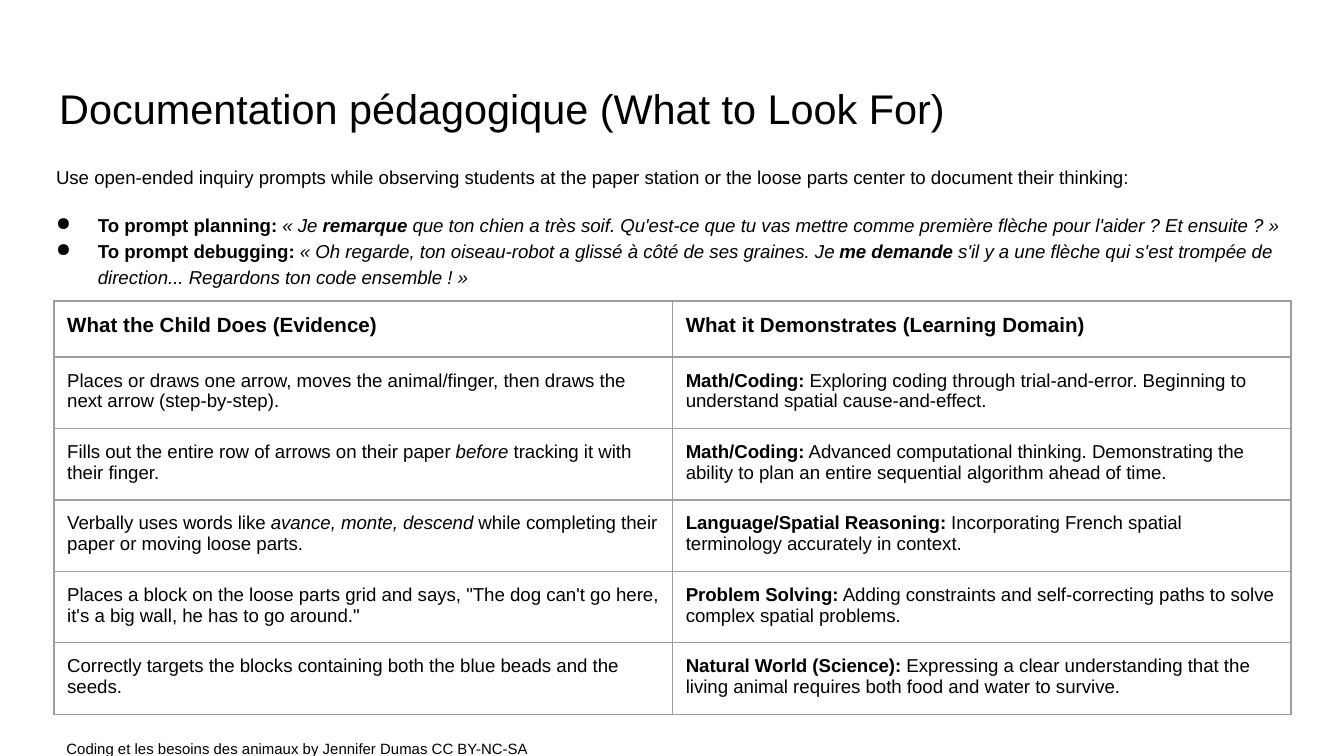
import pptx
import pptx.dml.color
import pptx.enum.text
import pptx.oxml
import pptx.oxml.ns
import pptx.util

PROMPTS = [
    [("To prompt planning: ", "b"), ("« Je ", "i"), ("remarque", "bi"),
     (" que ton chien a très soif. Qu'est-ce que tu vas mettre comme première flèche pour l'aider ? Et ensuite ? »", "i")],
    [("To prompt debugging: ", "b"),
     ("« Oh regarde, ton oiseau-robot a glissé à côté de ses graines. Je ", "i"), ("me demande", "bi"),
     (" s'il y a une flèche qui s'est trompée de direction... Regardons ton code ensemble ! »", "i")],
]
HEADINGS = ["What the Child Does (Evidence)", "What it Demonstrates (Learning Domain)"]
OBSERVATIONS = [
    ([("Places or draws one arrow, moves the animal/finger, then draws the next arrow (step-by-step).", "")],
     "Math/Coding:", " Exploring coding through trial-and-error. Beginning to understand spatial cause-and-effect."),
    ([("Fills out the entire row of arrows on their paper ", ""), ("before", "i"),
      (" tracking it with their finger.", "")],
     "Math/Coding:",
     " Advanced computational thinking. Demonstrating the ability to plan an entire sequential algorithm ahead of time."),
    ([("Verbally uses words like ", ""), ("avance, monte, descend", "i"),
      (" while completing their paper or moving loose parts.", "")],
     "Language/Spatial Reasoning:", " Incorporating French spatial terminology accurately in context."),
    ([("Places a block on the loose parts grid and says, \"The dog can't go here, it's a big wall, he has to go around.\"", "")],
     "Problem Solving:", " Adding constraints and self-correcting paths to solve complex spatial problems."),
    ([("Correctly targets the blocks containing both the blue beads and the seeds.", "")],
     "Natural World (Science):",
     " Expressing a clear understanding that the living animal requires both food and water to survive."),
]


def color(code):
    return pptx.dml.color.RGBColor.from_string(code)


class Sheet:
    """Holds the slide together with its font, ink, border and inset."""

    font, ink, border, inset = "Arial", "000000", "9E9E9E", pptx.util.Cm(0.25)

    def __init__(self, slide):
        self.slide = slide

    def add_words(self, paragraph, pieces, size):
        for words, style in pieces:
            run = paragraph.add_run()
            run.text = words
            run.font.name, run.font.size = self.font, pptx.util.Pt(size)
            run.font.bold, run.font.italic = "b" in style, "i" in style
            run.font.color.rgb = color(self.ink)

    def box(self, *place):
        frame = self.slide.shapes.add_textbox(*map(pptx.util.Cm, place)).text_frame
        frame.word_wrap = True
        frame.margin_left = frame.margin_right = frame.margin_top = frame.margin_bottom = self.inset
        return frame

    def bullet(self, paragraph):
        props = paragraph._p.get_or_add_pPr()
        props.set("marL", str(pptx.util.Cm(0.79)))
        props.set("indent", str(pptx.util.Cm(-0.81)))
        ns = pptx.oxml.ns.nsdecls("a")
        props.append(pptx.oxml.parse_xml(
            f'<a:buClr {ns}><a:srgbClr val="{self.ink}"/></a:buClr>'))
        props.append(pptx.oxml.parse_xml(f'<a:buChar {ns} char="●"/>'))

    def cell(self, cell, pieces, size):
        cell.margin_left = cell.margin_right = cell.margin_top = cell.margin_bottom = self.inset
        self.add_words(cell.text_frame.paragraphs[0], pieces, size)
        props = cell._tc.get_or_add_tcPr()
        for side in ("lnL", "lnR", "lnT", "lnB"):
            props.append(pptx.oxml.parse_xml(
                f'<a:{side} {pptx.oxml.ns.nsdecls("a")} w="{pptx.util.Pt(0.75)}"><a:solidFill>'
                f'<a:srgbClr val="{self.border}"/></a:solidFill></a:{side}>'))
        cell.fill.background()

    def table(self, left, top, column_width, heights, rows):
        place = (left, top, column_width * len(rows[0]), sum(heights))
        grid = self.slide.shapes.add_table(
            len(rows), len(rows[0]), *map(pptx.util.Cm, place)).table
        grid.first_row = grid.horz_banding = False
        for r, (height, row) in enumerate(zip(heights, rows)):
            grid.rows[r].height = pptx.util.Cm(height)
            for c, pieces in enumerate(row):
                self.cell(grid.cell(r, c), pieces, 10 if r else 11)


def main():
    deck = pptx.Presentation()
    deck.slide_width, deck.slide_height = pptx.util.Cm(25.4), pptx.util.Cm(14.29)
    sheet = Sheet(deck.slides.add_slide(deck.slide_layouts[6]))

    title = sheet.box(0.87, 1.24, 23.67, 1.6)
    title.vertical_anchor = pptx.enum.text.MSO_ANCHOR.MIDDLE
    sheet.add_words(title.paragraphs[0], [("Documentation pédagogique (What to Look For)", "")], 22.2)

    guidance = sheet.box(0.81, 2.82, 23.77, 4.11)
    intro = guidance.paragraphs[0]
    sheet.add_words(intro, [(
        "Use open-ended inquiry prompts while observing students at the paper station "
        "or the loose parts center to document their thinking:", "")], 10)
    for prompt in PROMPTS:
        paragraph = guidance.add_paragraph()
        sheet.add_words(paragraph, prompt, 10)
        sheet.bullet(paragraph)
    for paragraph in guidance.paragraphs:
        paragraph.line_spacing = 1.15
    for paragraph in guidance.paragraphs[:2]:
        paragraph.space_before = pptx.util.Pt(12)

    rows = [[[(heading, "b")] for heading in HEADINGS]]
    rows += [[evidence, [(domain, "b"), (meaning, "")]] for evidence, domain, meaning in OBSERVATIONS]
    sheet.table(1.02, 5.69, 11.69, [1.06] + [1.35] * len(OBSERVATIONS), rows)

    credit = sheet.box(0, 13.82, 11.25, 0.86).paragraphs[0]
    credit.alignment = pptx.enum.text.PP_ALIGN.CENTER
    sheet.add_words(credit, [("Coding et les besoins des animaux by Jennifer Dumas CC BY-NC-SA", "")], 8)

    deck.save("out.pptx")


if __name__ == "__main__":
    main()
